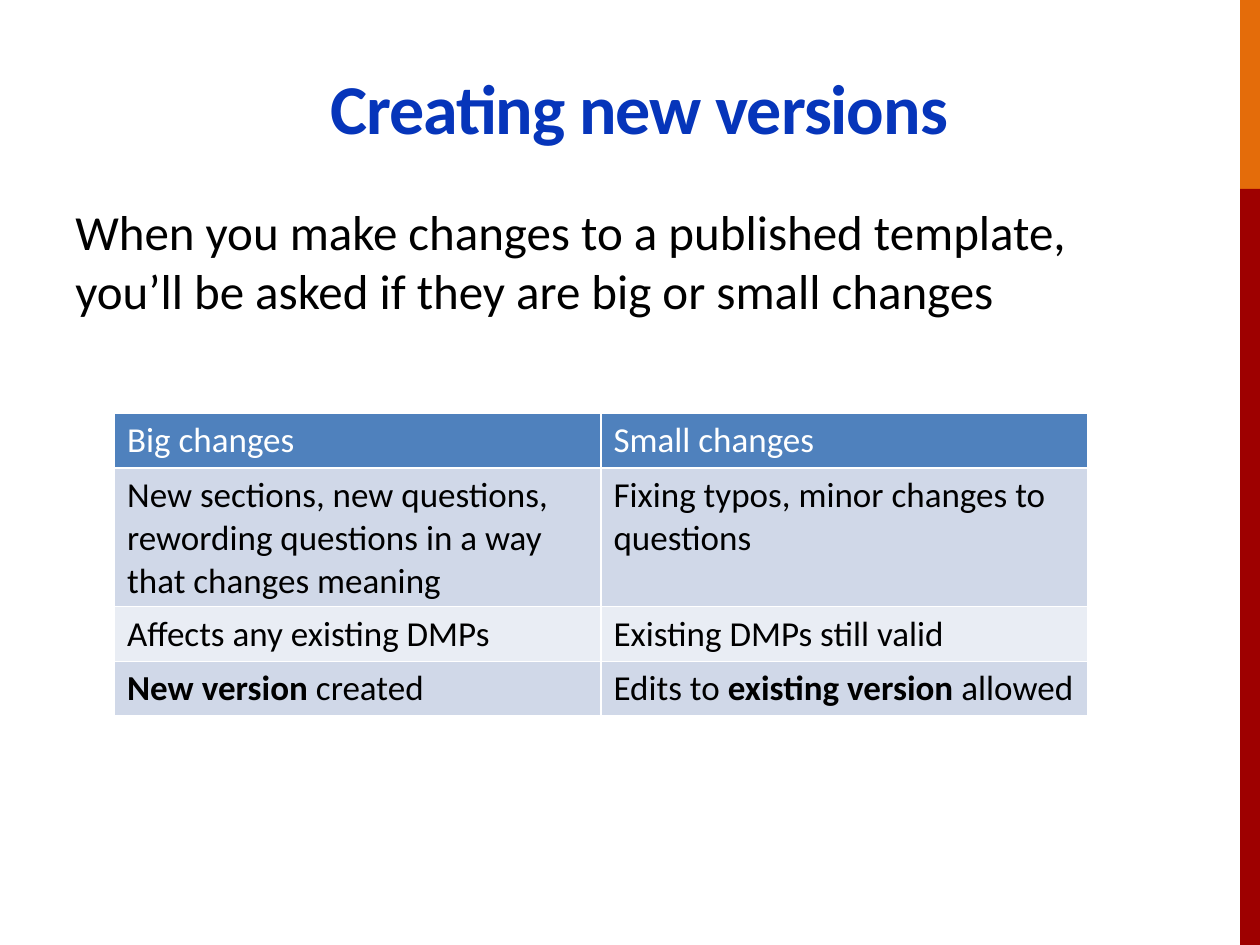
from typing import NamedTuple

import pptx
import pptx.dml.color
import pptx.enum.shapes
import pptx.enum.text
import pptx.oxml
import pptx.oxml.ns
import pptx.util

Cm = pptx.util.Cm
Pt = pptx.util.Pt

FONT = "Calibri"
COLOURS = {
    "orange": "E46C0A",
    "red": "9E0000",
    "title": "0635BA",
    "text": "000000",
    "white": "FFFFFF",
    "header": "4F81BD",
    "odd row": "D0D8E8",
    "even row": "E9EDF4",
}


class Area(NamedTuple):
    left: float
    top: float
    width: float
    height: float

    def lengths(self) -> list[pptx.util.Length]:
        return [Cm(value) for value in self]


class Words(NamedTuple):
    text: str
    bold: bool = False


class SideBar(NamedTuple):
    area: Area
    colour: str


SIDE_BARS = [
    SideBar(Area(25, 0, 0.4, 3.81), "orange"),
    SideBar(Area(25, 3.81, 0.4, 15.24), "red"),
]
TITLE_AREA = Area(1.27, 1.22, 23.24, 1.9)
BODY_AREA = Area(1.27, 3.94, 22.43, 13.08)
TABLE_AREA = Area(2.31, 8.33, 19.61, 4.16)
TABLE_ROWS = [
    [[Words("Big changes")], [Words("Small changes")]],
    [
        [Words("New sections, new questions, rewording questions in a way that changes meaning")],
        [Words("Fixing typos, minor changes to questions")],
    ],
    [[Words("Affects any existing DMPs")], [Words("Existing DMPs still valid")]],
    [
        [Words("New version ", True), Words("created")],
        [Words("Edits to "), Words("existing version ", True), Words("allowed")],
    ],
]


def rgb(name: str) -> pptx.dml.color.RGBColor:
    return pptx.dml.color.RGBColor.from_string(COLOURS[name])


def add_runs(para, runs: list[Words], size: float, colour: str) -> None:
    for words in runs:
        run = para.add_run()
        run.text = words.text
        run.font.name = FONT
        run.font.size = Pt(size)
        run.font.bold = words.bold
        run.font.color.rgb = rgb(colour)


def add_side_bar(page, bar: SideBar) -> None:
    shape = page.shapes.add_shape(
        pptx.enum.shapes.MSO_SHAPE.RECTANGLE, *bar.area.lengths()
    )
    shape.shadow.inherit = False
    shape.fill.solid()
    shape.fill.fore_color.rgb = rgb(bar.colour)
    shape.line.fill.background()


def add_text(page, area: Area, words: Words, size: float, colour: str):
    """Add a wrapping text box and return its text frame."""
    frame = page.shapes.add_textbox(*area.lengths()).text_frame
    frame.word_wrap = True
    add_runs(frame.paragraphs[0], [words], size, colour)
    return frame


def add_title(page) -> None:
    frame = add_text(page, TITLE_AREA, Words("Creating new versions", True), 40, "title")
    frame.vertical_anchor = pptx.enum.text.MSO_ANCHOR.BOTTOM
    para = frame.paragraphs[0]
    para.alignment = pptx.enum.text.PP_ALIGN.CENTER
    para.runs[0].font._element.set("spc", "-60")


def add_body(page) -> None:
    text = (
        "When you make changes to a published template, "
        "you’ll be asked if they are big or small changes"
    )
    para = add_text(page, BODY_AREA, Words(text), 28, "text").paragraphs[0]
    para.space_before = Pt(5.6)
    para.space_after = Pt(6)


def set_borders(cell, colour: str, width: float) -> None:
    """Line all four sides; borders must precede the fill in the cell XML."""
    properties = cell._tc.get_or_add_tcPr()
    for position, side in enumerate(("lnL", "lnR", "lnT", "lnB")):
        border = pptx.oxml.parse_xml(
            f'<a:{side} {pptx.oxml.ns.nsdecls("a")} w="{Pt(width)}"><a:solidFill>'
            f'<a:srgbClr val="{COLOURS[colour]}"/></a:solidFill></a:{side}>'
        )
        properties.insert(position, border)


def add_changes_table(page) -> None:
    table = page.shapes.add_table(
        len(TABLE_ROWS), len(TABLE_ROWS[0]), *TABLE_AREA.lengths()
    ).table
    for row_index, row in enumerate(TABLE_ROWS):
        table.rows[row_index].height = Cm(1.04)
        if row_index == 0:
            fill, text_colour = "header", "white"
        else:
            fill, text_colour = ("odd row" if row_index % 2 else "even row"), "text"
        for column_index, runs in enumerate(row):
            cell = table.cell(row_index, column_index)
            cell.fill.solid()
            cell.fill.fore_color.rgb = rgb(fill)
            set_borders(cell, "white", 1)
            add_runs(cell.text_frame.paragraphs[0], runs, 20, text_colour)


def main() -> None:
    deck = pptx.Presentation()
    deck.slide_width, deck.slide_height = Cm(25.4), Cm(19.05)
    page = deck.slides.add_slide(deck.slide_layouts[6])
    for bar in SIDE_BARS:
        add_side_bar(page, bar)
    add_title(page)
    add_body(page)
    add_changes_table(page)
    deck.save("out.pptx")


if __name__ == "__main__":
    main()
